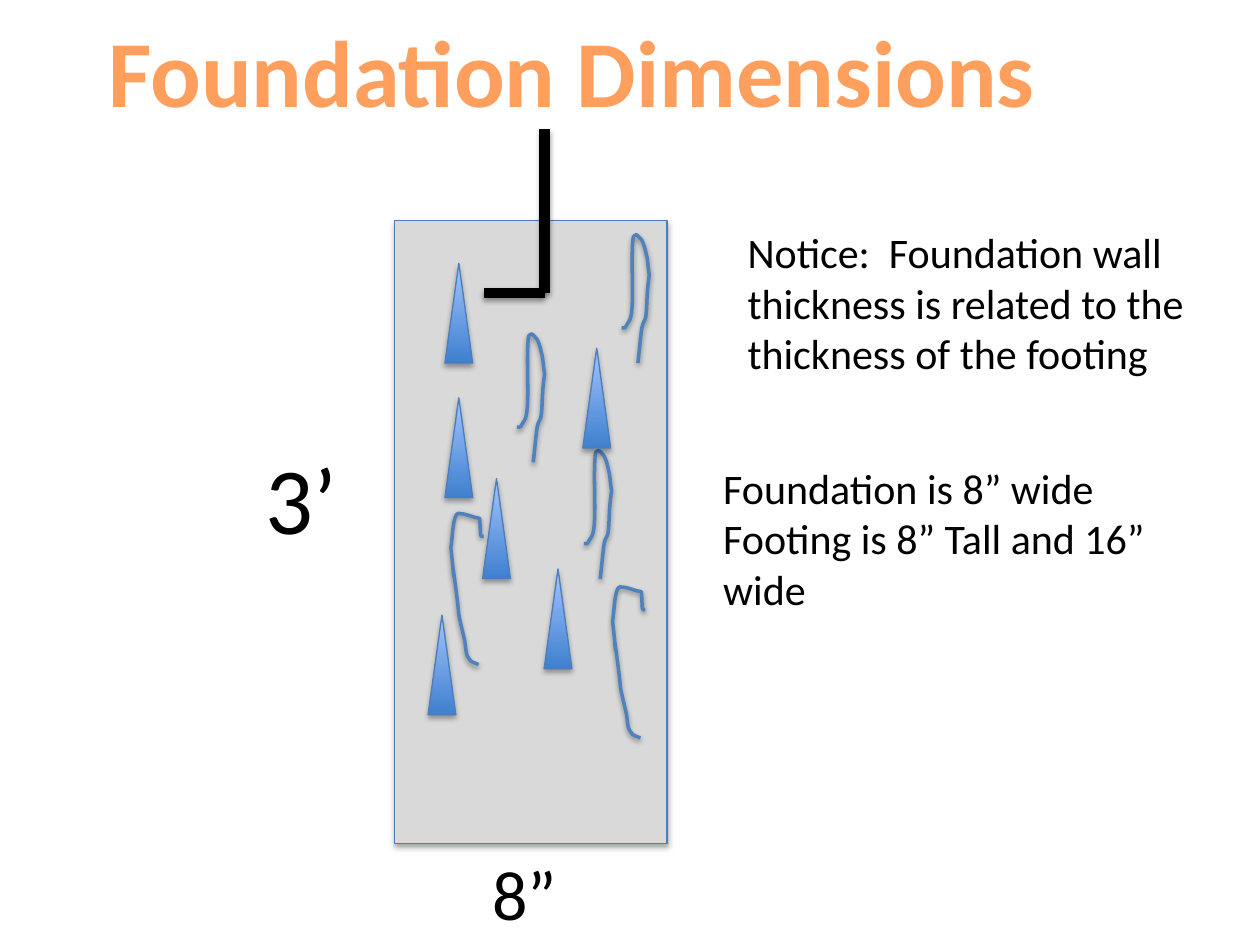
from dataclasses import dataclass

from lxml.etree import SubElement
from pptx import Presentation
from pptx.dml.color import RGBColor
from pptx.enum.shapes import MSO_CONNECTOR, MSO_SHAPE
from pptx.enum.text import MSO_AUTO_SIZE, PP_ALIGN
from pptx.oxml.ns import qn
from pptx.util import Cm, Pt

COLORS = {
    "concrete": "D9D9D9",
    "outline": "4B7EBC",
    "fiber": "4F81BD",
    "black": "000000",
}
STONE_STOPS = [(0, "3F80CE"), (100, "A4C4FF")]
TITLE_STOPS = [(0, "FFA367"), (25, "FF9F5D"), (50, "F38E3A"), (75, "FF9F5D"), (100, "FFA367")]
FONT = "Calibri"

# Fiber outlines in cm: a start point, then cubic curves (two controls and an end)
STRAND = [
    (0.33, 2.59),
    (0.36, 2.34), (0.38, 2.08), (0.41, 1.88),
    (0.43, 1.75), (0.48, 1.75), (0.49, 1.65),
    (0.51, 1.5), (0.51, 1.32), (0.52, 1.17),
    (0.53, 1.04), (0.54, 0.94), (0.56, 0.81),
    (0.53, 0.66), (0.53, 0.48), (0.49, 0.36),
    (0.43, 0.08), (0.38, 0.08), (0.3, 0),
    (0.28, 0.03), (0.23, 0), (0.23, 0.1),
    (0.18, 0.63), (0.28, 1.57), (0.15, 1.75),
    (0.05, 1.9), (0.1, 1.88), (0, 1.88),
]
HOOK = [
    (0.56, 3.05),
    (0.48, 3), (0.41, 3.02), (0.36, 2.92),
    (0.3, 2.87), (0.3, 2.69), (0.28, 2.57),
    (0.1, 1.8), (0.2, 2.26), (0.1, 1.52),
    (-0.05, 0.36), (0.15, 2.11), (0, 0.69),
    (0.03, 0.51), (0.03, 0.28), (0.08, 0.1),
    (0.1, 0.03), (0.13, 0), (0.15, 0),
    (0.3, 0), (0.43, 0.08), (0.58, 0.1),
    (0.61, 0.53), (0.58, 0.46), (0.66, 0.46),
]


@dataclass
class Stone:
    left: float
    top: float


@dataclass
class Fiber:
    left: float
    top: float
    outline: list


@dataclass
class Label:
    box: tuple
    lines: list
    size: int


# Contents of the wall, back to front
AGGREGATE = [
    Stone(9.73, 9.65), Stone(8.63, 12.4), Stone(10.97, 11.47),
    Fiber(11.77, 9.08, STRAND), Fiber(9.09, 10.35, HOOK), Fiber(12.35, 11.83, HOOK),
    Stone(8.97, 8.02), Stone(11.75, 7.02), Stone(8.97, 5.31),
    Fiber(10.42, 6.73, STRAND), Fiber(12.53, 4.73, STRAND),
]
ANCHOR_BOLT = [(10.98, 2.6), (10.98, 5.91), (9.75, 5.91)]
LABELS = [
    Label((5.11, 8.74, 3.53, 2.57), ["3’"], 54),
    Label((9.68, 17.02, 3.12, 1.96), ["8”"], 40),
    Label((14.82, 4.45, 9.83, 3.33),
          ["Notice:  Foundation wall thickness is related to the thickness of the footing"], 24),
    Label((14.33, 9.2, 10.69, 3.33),
          ["Foundation is 8” wide", "Footing is 8” Tall and 16” wide"], 24),
]


def rgb(name: str) -> RGBColor:
    return RGBColor.from_string(COLORS[name])


def add_shadow(shape, distance: float, opacity: int) -> None:
    properties = shape._element.spPr
    for old in properties.findall(qn("a:effectLst")):
        properties.remove(old)
    effects = SubElement(properties, qn("a:effectLst"))
    shadow = SubElement(effects, qn("a:outerShdw"), blurRad=str(Pt(3.1)),
                        dist=str(Pt(distance)), dir="5400000", rotWithShape="0")
    color = SubElement(shadow, qn("a:srgbClr"), val=COLORS["black"])
    SubElement(color, qn("a:alpha"), val=str(opacity * 1000))


def set_gradient(fill, element, stops: list, angle: int) -> None:
    fill.gradient()
    fill.gradient_angle = angle
    stop_list = element.find(".//" + qn("a:gsLst"))
    for old in list(stop_list):
        stop_list.remove(old)
    for position, color in stops:
        stop = SubElement(stop_list, qn("a:gs"), pos=str(position * 1000))
        SubElement(stop, qn("a:srgbClr"), val=color)


def set_line(shape, color: str, width: float) -> None:
    shape.line.color.rgb = rgb(color)
    shape.line.width = Pt(width)


def add_block(slide, kind, box: tuple):
    shape = slide.shapes.add_shape(kind, *map(Cm, box))
    set_line(shape, "outline", 0.75)
    add_shadow(shape, 1.8, 35)
    return shape


def add_stone(slide, stone: Stone) -> None:
    shape = add_block(slide, MSO_SHAPE.ISOSCELES_TRIANGLE, (stone.left, stone.top, 0.56, 2.01))
    set_gradient(shape.fill, shape._element.spPr, STONE_STOPS, 90)


def add_fiber(slide, fiber: Fiber) -> None:
    knots = [(Cm(x), Cm(y)) for x, y in fiber.outline[::3]]
    builder = slide.shapes.build_freeform(*knots[0])
    builder.add_line_segments(knots[1:], close=False)
    shape = builder.convert_to_shape(Cm(fiber.left), Cm(fiber.top))

    # Bend each straight segment into its cubic curve
    drawing = shape._element.find(".//" + qn("a:path"))
    for segment in drawing.findall(qn("a:lnTo")):
        drawing.remove(segment)
    for index in range(1, len(fiber.outline), 3):
        curve = SubElement(drawing, qn("a:cubicBezTo"))
        for x, y in fiber.outline[index:index + 3]:
            SubElement(curve, qn("a:pt"), x=str(Cm(x)), y=str(Cm(y)))

    shape.fill.background()
    set_line(shape, "fiber", 2)
    add_shadow(shape, 1.6, 38)


def add_bolt_part(slide, start: tuple, end: tuple) -> None:
    connector = slide.shapes.add_connector(MSO_CONNECTOR.STRAIGHT, *map(Cm, start + end))
    set_line(connector, "black", 6)
    add_shadow(connector, 1.6, 38)


def add_label(slide, label: Label):
    frame = slide.shapes.add_textbox(*map(Cm, label.box)).text_frame
    frame.word_wrap = True
    frame.auto_size = MSO_AUTO_SIZE.SHAPE_TO_FIT_TEXT
    for index, line in enumerate(label.lines):
        paragraph = frame.add_paragraph() if index else frame.paragraphs[0]
        run = paragraph.add_run()
        run.text = line
        run.font.name = FONT
        run.font.size = Pt(label.size)
        run.font.color.rgb = rgb("black")
    return frame


def add_title(slide) -> None:
    frame = add_label(slide, Label((1.81, 0.13, 19.43, 2.57), ["Foundation Dimensions"], 54))
    frame.word_wrap = False
    paragraph = frame.paragraphs[0]
    paragraph.alignment = PP_ALIGN.CENTER
    run = paragraph.runs[0]
    run.font.bold = True
    set_gradient(run.font.fill, run._r, TITLE_STOPS, 270)


def main() -> None:
    presentation = Presentation()
    presentation.slide_width, presentation.slide_height = Cm(25.4), Cm(19.05)
    slide = presentation.slides.add_slide(presentation.slide_layouts[6])

    # Foundation wall and what is mixed into it
    wall = add_block(slide, MSO_SHAPE.RECTANGLE, (7.95, 4.45, 5.5, 12.56))
    wall.fill.solid()
    wall.fill.fore_color.rgb = rgb("concrete")
    for piece in AGGREGATE:
        if isinstance(piece, Stone):
            add_stone(slide, piece)
        else:
            add_fiber(slide, piece)

    # Anchor bolt
    for start, end in zip(ANCHOR_BOLT, ANCHOR_BOLT[1:]):
        add_bolt_part(slide, start, end)

    # Title, dimensions and notes
    add_title(slide)
    for label in LABELS:
        add_label(slide, label)
    presentation.save("out.pptx")


if __name__ == "__main__":
    main()
